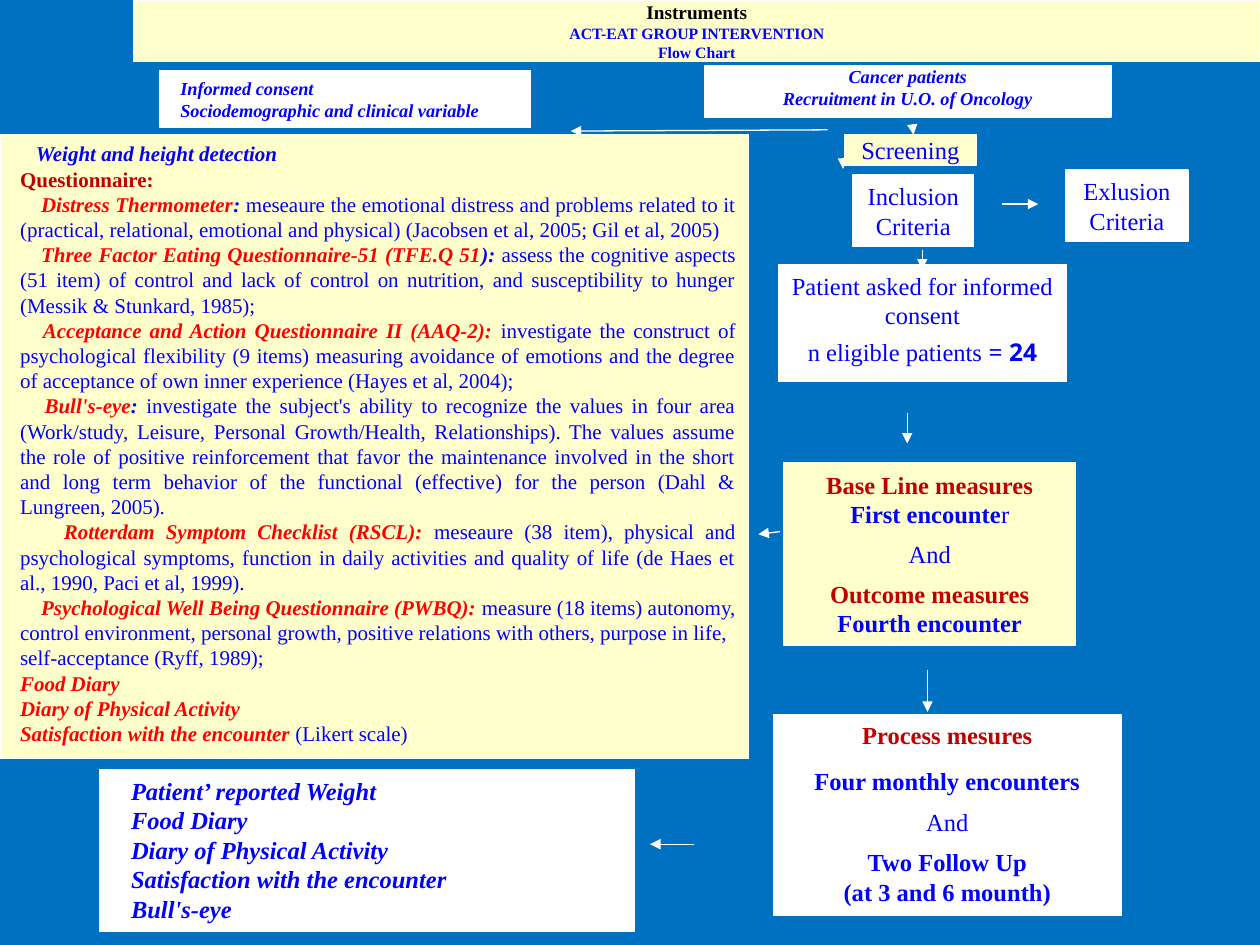
import pptx
import pptx.dml.color
import pptx.enum.shapes
import pptx.enum.text
import pptx.util
import lxml.etree
from pptx.oxml.ns import qn

Pt = pptx.util.Pt
ALIGN = pptx.enum.text.PP_ALIGN
ANCHOR = pptx.enum.text.MSO_ANCHOR
COLORS = {
    "background": "0070C0",
    "white": "FFFFFF",
    "cream": "FFFFCC",
    "blue": "0000FF",
    "dark_red": "C00000",
    "red": "FF0000",
    "black": "000000",
}
STRONG = dict(bold=True, italic=True)
NAME = dict(color="red", **STRONG)


def color_of(name):
    return pptx.dml.color.RGBColor.from_string(COLORS[name])


def add_text(paragraph, text, size=14, color="blue", bold=False, italic=False,
             font="Times New Roman"):
    """Add text to a paragraph; a newline becomes a line break."""
    for number, line in enumerate(text.split("\n")):
        if number:
            paragraph.add_line_break()
        run = paragraph.add_run()
        run.text = line
        run.font.size = Pt(size)
        run.font.name = font
        run.font.bold = bold
        run.font.italic = italic
        run.font.color.rgb = color_of(color)


def line(*runs, align=ALIGN.CENTER, before=0, margin=0, indent=0):
    """Describe a paragraph; each run is a text or a (text, format) pair."""
    pairs = [(run, {}) if isinstance(run, str) else run for run in runs]
    return dict(runs=pairs, align=align, before=before, margin=margin, indent=indent)


def fill_panel(shape, lines, fill="white", anchor=ANCHOR.TOP,
               insets=(7.2, 3.6, 7.2, 3.6), **text_format):
    shape.fill.solid()
    shape.fill.fore_color.rgb = color_of(fill)
    shape.line.color.rgb = color_of("white")
    shape.line.width = Pt(0.75)
    frame = shape.text_frame
    frame.word_wrap = True
    frame.auto_size = pptx.enum.text.MSO_AUTO_SIZE.NONE
    frame.vertical_anchor = anchor
    (frame.margin_left, frame.margin_top,
     frame.margin_right, frame.margin_bottom) = map(Pt, insets)
    for number, content in enumerate(lines):
        paragraph = frame.add_paragraph() if number else frame.paragraphs[0]
        paragraph.alignment = content["align"]
        paragraph.space_before = Pt(content["before"])
        properties = paragraph._p.get_or_add_pPr()
        properties.set("marL", str(Pt(content["margin"])))
        properties.set("indent", str(Pt(content["indent"])))
        for text, run_format in content["runs"]:
            add_text(paragraph, text, **{**text_format, **run_format})


def add_panel(slide, box, place, lines, **panel_format):
    """Add a filled text panel at a place measured from the box's corner."""
    left, top, width, height = place
    shape = slide.shapes.add_shape(
        pptx.enum.shapes.MSO_SHAPE.RECTANGLE,
        Pt(box[0] + left), Pt(box[1] + top), Pt(width), Pt(height))
    shape.shadow.inherit = False
    fill_panel(shape, lines, **panel_format)


def add_arrow(slide, box, start, end):
    left, top = box[:2]
    connector = slide.shapes.add_connector(
        pptx.enum.shapes.MSO_CONNECTOR.STRAIGHT,
        Pt(left + start[0]), Pt(top + start[1]), Pt(left + end[0]), Pt(top + end[1]))
    connector.line.color.rgb = color_of("white")
    connector.line.width = Pt(0.75)
    outline = connector.line._get_or_add_ln()
    lxml.etree.SubElement(outline, qn("a:tailEnd"), type="triangle")
    lxml.etree.SubElement(connector._element.spPr, qn("a:effectLst"))


def add_header(slide, box):
    title = slide.shapes.title
    title.left, title.top, title.width, title.height = map(Pt, box)
    fill_panel(title, [
        line(("Instruments", dict(size=11, color="black"))),
        line("ACT-EAT GROUP INTERVENTION\nFlow Chart"),
    ], fill="cream", anchor=ANCHOR.MIDDLE, insets=(7.2, 0, 7.2, 0), size=9, bold=True)


def add_instruments(slide, box):
    """Left column: consent, questionnaires and follow-up instruments."""
    left, justify = ALIGN.LEFT, ALIGN.JUSTIFY
    add_panel(slide, box, (91.5, 0, 211.5, 32.5), [
        line("Informed consent", align=left),
        line("Sociodemographic and clinical variable", align=left),
    ], insets=(11.5, 3.6, 0, 3.6), size=10.5, **STRONG)

    questionnaires = [
        ("Distress Thermometer", ": ", "meseaure the emotional distress and problems related to it "
         "(practical, relational, emotional and physical) (Jacobsen et al, 2005; Gil et al, 2005)",
         12, justify),
        ("Three Factor Eating Questionnaire-51 (TFE.Q 51", "): ", "assess the cognitive aspects "
         "(51 item) of control and lack of control on nutrition, and susceptibility to hunger "
         "(Messik & Stunkard, 1985);", 12, justify),
        ("Acceptance and Action Questionnaire II (AAQ-2): ", "", "investigate the construct of "
         "psychological flexibility (9 items) measuring avoidance of emotions and the degree of "
         "acceptance of own inner experience (Hayes et al, 2004);", 13, justify),
        ("Bull's-eye", ": ", "investigate the subject's ability to recognize the values in four "
         "area (Work/study, Leisure, Personal Growth/Health, Relationships). The values assume "
         "the role of positive reinforcement that favor the maintenance involved in the short "
         "and long term behavior of the functional (effective) for the person "
         "(Dahl & Lungreen, 2005).", 14, justify),
        ("Rotterdam Symptom Checklist (RSCL): ", "", "meseaure (38 item), physical and "
         "psychological symptoms, function in daily activities and quality of life "
         "(de Haes et al., 1990, Paci et al, 1999).", 25, justify),
        ("Psychological Well Being Questionnaire (PWBQ): ", "", "measure (18 items) autonomy, "
         "control environment, personal growth, positive relations with others, purpose in "
         "life, self-acceptance (Ryff, 1989);", 12, left),
    ]
    lines = [
        line(("Weight and height detection", STRONG), align=left, indent=9),
        line(("Questionnaire:", dict(color="dark_red", bold=True)), align=left),
    ]
    for name, mark, description, indent, align in questionnaires:
        runs = [(name, NAME), (mark, STRONG), (description, {})]
        lines.append(line(*[run for run in runs if run[0]], align=align, indent=indent))
    lines += [
        line(("Food Diary", NAME), align=left),
        line(("Diary of Physical Activity", NAME), align=left),
        line(("Satisfaction with the encounter ", NAME), "(Likert scale)", align=left),
    ]
    add_panel(slide, box, (0, 36.7, 427.7, 356.5), lines, fill="cream",
              insets=(11.5, 3.6, 7.2, 3.6), size=12)

    follow_up = ["Patient’ reported Weight", "Food Diary", "Diary of Physical Activity",
                 "Satisfaction with the encounter", "Bull's-eye"]
    add_panel(slide, box, (57, 399.6, 305.3, 92.2),
              [line(text, align=left, margin=10.8) for text in follow_up], **STRONG)


def add_patient_flow(slide, box):
    """Right column: the steps from recruitment to follow-up."""
    heading = dict(color="dark_red", bold=True)
    bold = dict(bold=True)
    add_panel(slide, box, (32.5, 1.4, 232.5, 29.5), [
        line("Cancer patients"), line("Recruitment in U.O. of Oncology"),
    ], insets=(7.2, 0, 7.2, 0), size=10.5, **STRONG)
    add_panel(slide, box, (239.1, 61.2, 69.8, 41), [line("Exlusion Criteria")])
    add_panel(slide, box, (117.4, 64.1, 69.1, 41), [line("Inclusion Criteria")])
    add_panel(slide, box, (112.4, 41, 75.6, 17.3), [line("Screening")],
              fill="cream", insets=(7.2, 0, 7.2, 0))
    add_panel(slide, box, (75, 115.2, 164.2, 67), [
        line("Patient asked for informed consent"),
        line("n eligible patients ", ("= ", dict(font="Noto Sans")),
             ("24", dict(font="Noto Sans", bold=True)), before=4),
    ])
    add_panel(slide, box, (77.8, 228.2, 167, 104.4), [
        line(("Base Line measures", heading)),
        line(("First encounte", bold), "r"),
        line("And", before=6),
        line(("Outcome measures", heading), before=6),
        line(("Fourth encounter", bold)),
    ], fill="cream", anchor=ANCHOR.MIDDLE)
    add_panel(slide, box, (72, 372.2, 198.7, 115.2), [
        line(("Process mesures", heading)),
        line(("Four monthly encounters", bold), before=9),
        line("And", before=7),
        line(("Two Follow Up", bold), before=6),
        line(("(at 3 and 6 mounth)", bold)),
    ])


def add_flow_arrows(slide, box):
    arrows = [
        ((103, 38.2), (-43.8, 38.9)),
        ((151.3, 35.3), (152, 41)),
        ((111.7, 54), (111.7, 60.5)),
        ((202.4, 80.6), (223.3, 80.6)),
        ((157, 106.6), (157, 118)),
        ((148.4, 200.2), (148.4, 217.4)),
        ((75.7, 267.8), (63.4, 269.3)),
        ((160, 347), (160, 370.8)),
        ((26.7, 446.4), (1.5, 446.4)),
    ]
    for start, end in arrows:
        add_arrow(slide, box, start, end)


def main():
    presentation = pptx.Presentation()
    presentation.slide_width, presentation.slide_height = Pt(720), Pt(540)
    slide = presentation.slides.add_slide(presentation.slide_layouts[5])
    slide.background.fill.solid()
    slide.background.fill.fore_color.rgb = color_of("background")
    flow_box = (370, 36, 310, 488)
    add_header(slide, (76.3, 0, 643.7, 35.3))
    add_flow_arrows(slide, flow_box)
    add_instruments(slide, (0, 40.3, 428, 492))
    add_patient_flow(slide, flow_box)
    presentation.save("out.pptx")


if __name__ == "__main__":
    main()
